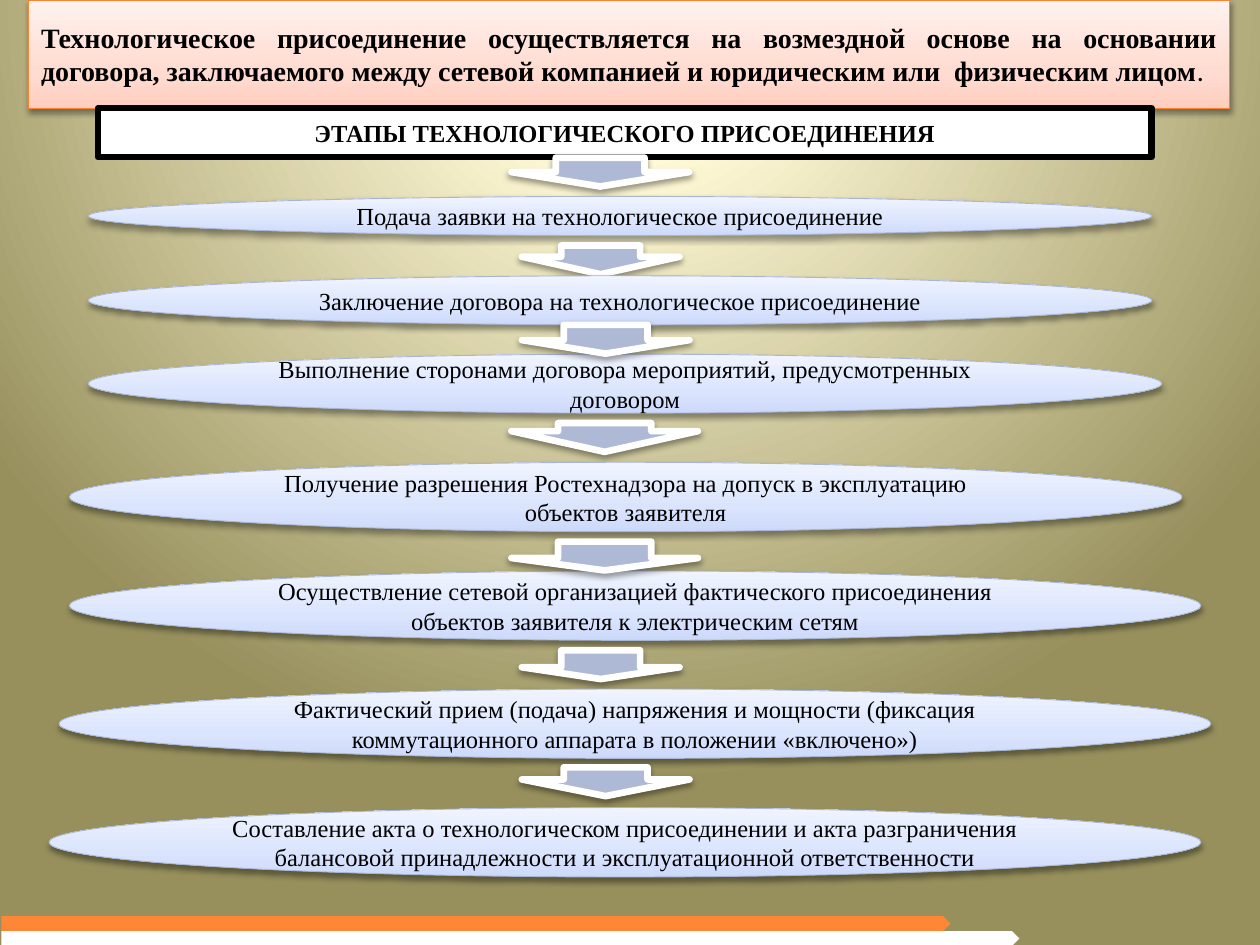
import pptx
import pptx.dml.color
import pptx.enum.shapes
import pptx.enum.text
import pptx.oxml
import pptx.oxml.ns
import pptx.util

Cm = pptx.util.Cm
Pt = pptx.util.Pt
RGB = pptx.dml.color.RGBColor
SHAPE = pptx.enum.shapes.MSO_SHAPE
ALIGN = pptx.enum.text.PP_ALIGN
qn = pptx.oxml.ns.qn

BLACK = RGB(0x00, 0x00, 0x00)
WHITE = RGB(0xFF, 0xFF, 0xFF)
ORANGE = RGB(0xFE, 0x86, 0x37)
HEADER_LINE = RGB(0xFD, 0x82, 0x31)
STAGE_LINE = RGB(0xA9, 0xB6, 0xD1)
ARROW_FILL = RGB(0xAE, 0xBA, 0xD5)
HEADER_STOPS = [(0, RGB(0xFF, 0xCE, 0xBF)), (35, RGB(0xFF, 0xDC, 0xD2)), (100, RGB(0xFF, 0xF2, 0xEE))]
STAGE_STOPS = [(0, RGB(0xCC, 0xD9, 0xFB)), (35, RGB(0xDA, 0xE4, 0xFC)), (100, RGB(0xF0, 0xF4, 0xFF))]
PAGE_STOPS = [(0, RGB(0xFF, 0xF9, 0xD7)), (12, RGB(0xFF, 0xF9, 0xD7)),
              (20, RGB(0xFF, 0xF9, 0xD6)), (100, RGB(0x97, 0x90, 0x5D))]

HEADER = ("Технологическое присоединение осуществляется на возмездной основе на основании "
          "договора, заключаемого между сетевой компанией и юридическим или  физическим лицом")
TITLE = "ЭТАПЫ ТЕХНОЛОГИЧЕСКОГО ПРИСОЕДИНЕНИЯ"

# Stage text, then left, top, width, height in cm
STAGES = [
    ("Подача заявки на технологическое присоединение", 1.78, 3.96, 21.44, 0.79),
    ("Заключение договора на технологическое присоединение", 1.78, 5.56, 21.44, 0.99),
    ("Выполнение сторонами договора мероприятий, предусмотренных договором",
     1.78, 7.14, 21.64, 1.19),
    ("Получение разрешения Ростехнадзора на допуск в эксплуатацию объектов заявителя",
     1.4, 9.32, 22.43, 1.4),
    ("Осуществление сетевой организацией фактического присоединения "
     "объектов заявителя к электрическим сетям", 1.4, 11.51, 22.81, 1.4),
    ("Фактический прием (подача) напряжения и мощности (фиксация "
     "коммутационного аппарата в положении «включено»)", 1.19, 13.89, 23.22, 1.4),
    ("Составление акта о технологическом присоединении и акта разграничения "
     "балансовой принадлежности и эксплуатационной ответственности", 0.99, 16.28, 23.22, 1.4),
]
# Arrow leading to each stage: left, top, width in cm, head ratio, lies above the stages
ARROWS = [
    (10.31, 3.18, 3.58, 0.5, False),
    (10.52, 4.95, 3.18, 0.61, False),
    (10.52, 6.55, 3.38, 0.47, True),
    (10.31, 8.53, 3.76, 0.72, False),
    (10.31, 10.92, 3.76, 0.43, True),
    (10.52, 13.11, 3.18, 0.41, False),
    (10.52, 15.47, 3.38, 0.58, False),
]
ARROW_HEIGHT = 0.58
# Bottom stripes: top, width in cm, colour
STRIPES = [(18.47, 19.13, ORANGE), (18.77, 20.52, WHITE)]

NS = 'xmlns:a="http://schemas.openxmlformats.org/drawingml/2006/main"'
UPWARD = '<a:lin ang="16200000" scaled="0"/>'
RADIAL = '<a:path path="circle"><a:fillToRect l="10000" t="-25000" r="10000" b="125000"/></a:path>'


def set_gradient(owner, fill, stops, direction):
    """Replace the fill of the owner element with a gradient of several stops."""
    fill.gradient()
    old = next(owner.iter(qn("a:gradFill")))
    marks = "".join(f'<a:gs pos="{pos * 1000}"><a:srgbClr val="{color}"/></a:gs>'
                    for pos, color in stops)
    old.getparent().replace(old, pptx.oxml.parse_xml(
        f'<a:gradFill {NS} rotWithShape="1"><a:gsLst>{marks}</a:gsLst>{direction}</a:gradFill>'))


def add_part(slide, kind, box, fill, line=None, weight=0.5, shadow=False):
    part = slide.shapes.add_shape(kind, *map(Cm, box))
    part.shadow.inherit = False
    if isinstance(fill, list):
        set_gradient(part.element.spPr, part.fill, fill, UPWARD)
    else:
        part.fill.solid()
        part.fill.fore_color.rgb = fill
    if line is None:
        part.line.fill.background()
    else:
        part.line.color.rgb = line
        part.line.width = Pt(weight)
    if shadow:
        part.element.spPr.find(qn("a:effectLst")).append(pptx.oxml.parse_xml(
            f'<a:outerShdw {NS} blurRad="{Pt(3.5)}" dist="{Pt(2)}" dir="5400000" rotWithShape="0">'
            '<a:srgbClr val="000000"><a:alpha val="38000"/></a:srgbClr></a:outerShdw>'))
    return part


def write(part, text, size=14, bold=False, font="Times New Roman", align=ALIGN.CENTER):
    """Add a run to the first paragraph of the part."""
    frame = part.text_frame
    frame.word_wrap = True
    frame.vertical_anchor = pptx.enum.text.MSO_ANCHOR.MIDDLE
    paragraph = frame.paragraphs[0]
    paragraph.alignment = align
    run = paragraph.add_run()
    run.text = text
    run.font.size = Pt(size)
    run.font.bold = bold
    run.font.name = font
    run.font.color.rgb = BLACK


def add_arrow(slide, left, top, width, head):
    arrow = add_part(slide, SHAPE.DOWN_ARROW, (left, top, width, ARROW_HEIGHT),
                     ARROW_FILL, WHITE, 3.82, shadow=True)
    arrow.adjustments[0] = 0.5
    arrow.adjustments[1] = head


def main():
    deck = pptx.Presentation()
    deck.slide_width, deck.slide_height = Cm(25.4), Cm(19.05)
    slide = deck.slides.add_slide(deck.slide_layouts[6])
    set_gradient(slide.element, slide.background.fill, PAGE_STOPS, RADIAL)

    # Header and title
    header = add_part(slide, SHAPE.RECTANGLE, (0.58, 0, 24.21, 2.18),
                      HEADER_STOPS, HEADER_LINE, shadow=True)
    write(header, HEADER, size=16, bold=True, align=ALIGN.JUSTIFY)
    write(header, ".", size=16, font="Calibri", align=ALIGN.JUSTIFY)
    title = add_part(slide, SHAPE.RECTANGLE, (1.98, 2.18, 21.23, 0.99), WHITE, BLACK, 3.78)
    write(title, TITLE, bold=True)

    # Stages with the arrows between them
    for (text, *box), (*place, above) in zip(STAGES, ARROWS):
        if not above:
            add_arrow(slide, *place)
        stage = add_part(slide, SHAPE.OVAL, box, STAGE_STOPS, STAGE_LINE, shadow=True)
        write(stage, text)
    for *place, above in ARROWS:
        if above:
            add_arrow(slide, *place)

    # Bottom stripes
    for top, width, color in STRIPES:
        add_part(slide, SHAPE.PENTAGON, (0.03, top, width, 0.3), color)

    deck.save("out.pptx")


if __name__ == "__main__":
    main()
